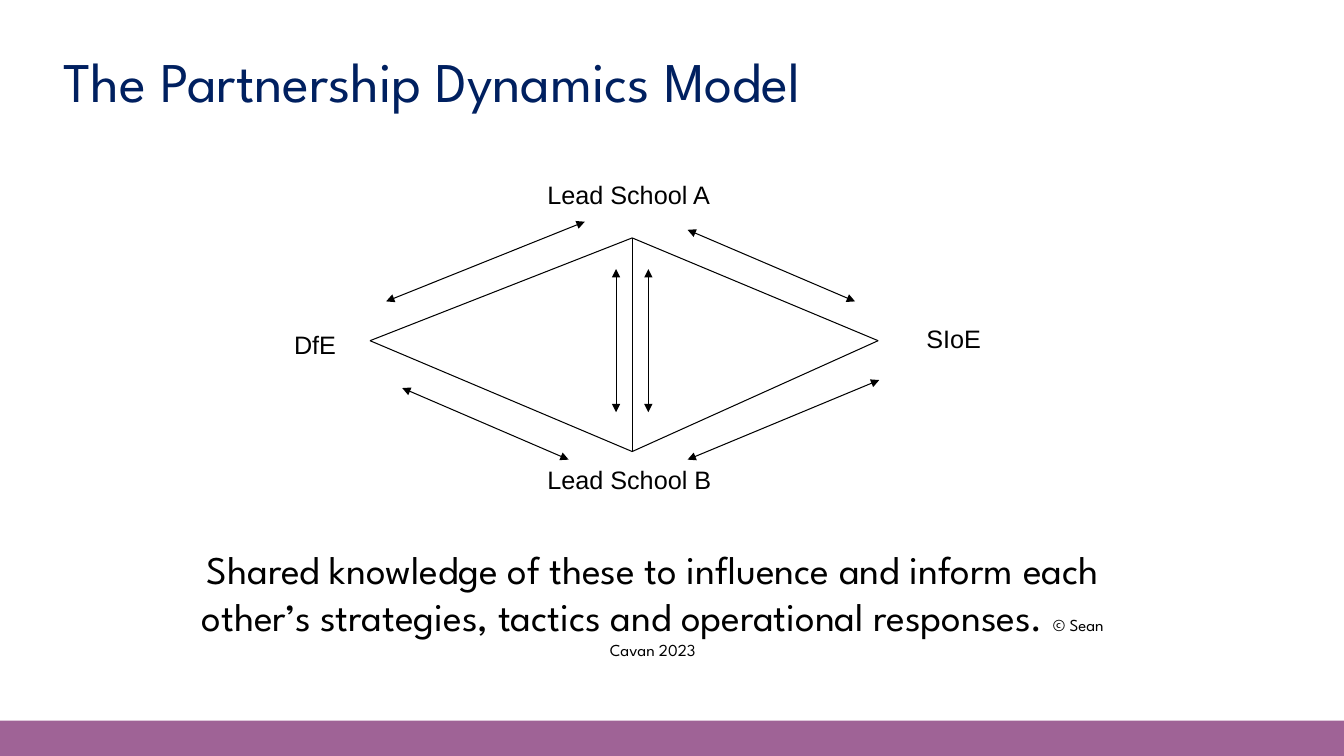
from dataclasses import dataclass
from itertools import combinations
from lxml.etree import SubElement
from pptx import Presentation
from pptx.dml.color import RGBColor
from pptx.enum.shapes import MSO_CONNECTOR, MSO_SHAPE
from pptx.enum.text import MSO_ANCHOR, MSO_AUTO_SIZE, PP_ALIGN
from pptx.oxml.ns import qn
from pptx.util import Inches, Pt


@dataclass(frozen=True)
class Theme:
    """Colours, fonts and type sizes of the slide."""
    navy: RGBColor = RGBColor(0x00, 0x20, 0x60)
    ink: RGBColor = RGBColor(0, 0, 0)
    plum: RGBColor = RGBColor(0x9F, 0x63, 0x96)
    display: str = "League Spartan"
    plain: str = "Arial"
    title: Pt = Pt(40)
    caption: Pt = Pt(28)
    label: Pt = Pt(18)
    credit: Pt = Pt(12)
    stroke: Pt = Pt(0.75)


THEME = Theme()
WIDTH, HEIGHT = Inches(13.33), Inches(7.5)

CORNERS = {
    "DfE": (27.53, 45.07),
    "Lead School A": (47.04, 31.47),
    "Lead School B": (47.04, 59.73),
    "SIoE": (65.34, 45.07),
}
LABELS = {
    "Lead School A": ((39.98, 23.07, 13.73, 5.33), False, PP_ALIGN.LEFT),
    "Lead School B": ((39.98, 60.8, 15.98, 5.33), True, PP_ALIGN.LEFT),
    "DfE": ((16.43, 42.93, 14.03, 5.33), True, PP_ALIGN.CENTER),
    "SIoE": ((68.19, 42.13, 5.63, 5.33), False, PP_ALIGN.LEFT),
}
OUTER_EXCHANGES = [
    ((51.16, 30.4), (63.62, 39.87)),
    ((51.16, 60.8), (65.42, 50.27)),
    ((28.73, 39.87), (43.51, 29.33)),
    ((29.93, 51.33), (42.31, 60.8)),
]
SCHOOL_GAP = 1.2
SCHOOL_SPAN = (35.6, 54.53)


def place(*shares):
    """Turn alternating percent shares of width and height into lengths."""
    return [int(share * (HEIGHT if i % 2 else WIDTH) / 100)
            for i, share in enumerate(shares)]


def apply(target, formats):
    """Set each format value on the target."""
    for name, value in formats.items():
        setattr(target, name, value)


def add_text(slide, area, runs, frame_format, paragraph_format):
    """Add a one-paragraph text box from (text, size, font, colour) runs."""
    frame = slide.shapes.add_textbox(*place(*area)).text_frame
    apply(frame, frame_format)
    paragraph = frame.paragraphs[0]
    apply(paragraph, paragraph_format)
    for text, size, face, colour in runs:
        run = paragraph.add_run()
        run.text = text
        apply(run.font, {"size": size, "name": face})
        run.font.color.rgb = colour


def add_line(slide, start, end, arrows=False):
    """Add a thin straight line, with arrowheads at both ends if asked."""
    line = slide.shapes.add_connector(
        MSO_CONNECTOR.STRAIGHT, *place(*start, *end))
    line.line.color.rgb = THEME.ink
    line.line.width = THEME.stroke
    properties = line._element.spPr
    if arrows:
        outline = properties.find(qn("a:ln"))
        for tip in ("a:headEnd", "a:tailEnd"):
            SubElement(outline, qn(tip), type="triangle")
    SubElement(properties, qn("a:effectLst"))


def add_footer_band(slide):
    """Add the coloured band along the bottom edge."""
    band = slide.shapes.add_shape(
        MSO_SHAPE.RECTANGLE, *place(0, 95.33, 100, 4.67))
    band.shadow.inherit = False
    band.fill.solid()
    band.fill.fore_color.rgb = THEME.plum
    band.line.fill.background()


def add_model(slide):
    """Draw the partnership diamond with its labels and exchanges."""
    for one, other in combinations(CORNERS, 2):
        if (one, other) != ("DfE", "SIoE"):
            add_line(slide, CORNERS[one], CORNERS[other])
    for name, (area, wraps, alignment) in LABELS.items():
        add_text(slide, area, [(name, THEME.label, THEME.plain, THEME.ink)],
                 {"word_wrap": wraps,
                  "auto_size": MSO_AUTO_SIZE.SHAPE_TO_FIT_TEXT},
                 {"alignment": alignment})
    axis = CORNERS["Lead School A"][0]
    top, bottom = SCHOOL_SPAN
    school_exchanges = [((axis + gap, top), (axis + gap, bottom))
                        for gap in (-SCHOOL_GAP, SCHOOL_GAP)]
    for start, end in OUTER_EXCHANGES + school_exchanges:
        add_line(slide, start, end, arrows=True)


def main():
    """Build and save the slide."""
    deck = Presentation()
    apply(deck, {"slide_width": WIDTH, "slide_height": HEIGHT})
    slide = deck.slides.add_slide(deck.slide_layouts[6])
    add_footer_band(slide)
    add_text(slide, (3.98, 2.8, 69.77, 16.67),
             [("The Partnership Dynamics Model",
               THEME.title, THEME.display, THEME.navy)],
             {"word_wrap": True, "vertical_anchor": MSO_ANCHOR.MIDDLE},
             {"line_spacing": 0.9})
    add_model(slide)
    add_text(slide, (13.35, 71.47, 70.44, 20.13),
             [("Shared knowledge of these to influence and inform each "
               "other’s strategies, tactics and operational responses. ",
               THEME.caption, THEME.display, THEME.ink),
              ("© Sean Cavan 2023",
               THEME.credit, THEME.display, THEME.ink)],
             {"word_wrap": True,
              "auto_size": MSO_AUTO_SIZE.SHAPE_TO_FIT_TEXT},
             {"alignment": PP_ALIGN.CENTER})
    deck.save("out.pptx")


if __name__ == "__main__":
    main()
